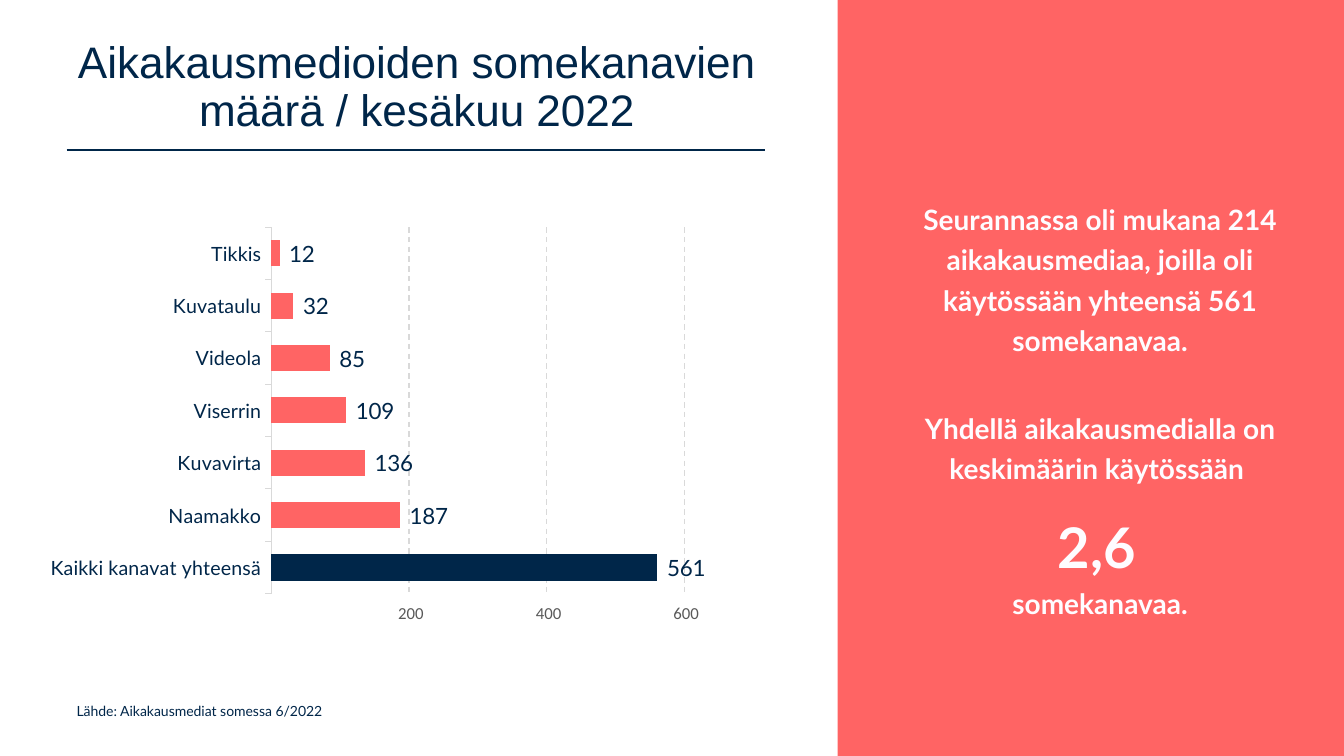
from lxml import etree
from pptx import Presentation
from pptx.chart.data import CategoryChartData
from pptx.dml.color import RGBColor
from pptx.enum.chart import XL_CHART_TYPE, XL_LABEL_POSITION, XL_TICK_MARK
from pptx.enum.dml import MSO_LINE
from pptx.enum.shapes import MSO_CONNECTOR, MSO_SHAPE
from pptx.enum.text import MSO_ANCHOR, PP_ALIGN
from pptx.oxml import parse_xml
from pptx.oxml.ns import nsdecls, qn
from pptx.util import Cm, Pt

BAR = XL_CHART_TYPE.BAR_CLUSTERED
OUTSIDE_END = XL_LABEL_POSITION.OUTSIDE_END
TICK_OUTSIDE = XL_TICK_MARK.OUTSIDE
DASH = MSO_LINE.DASH
STRAIGHT = MSO_CONNECTOR.STRAIGHT
RECTANGLE = MSO_SHAPE.RECTANGLE
MIDDLE = MSO_ANCHOR.MIDDLE
CENTER = PP_ALIGN.CENTER

NAVY, CORAL, GRID, GREY, PALE = "002649", "FF6464", "D9D9D9", "595959", "FEFCFF"
NUMBER_FORMAT = r"#\ ##0;\-#\ ##0;;@"  # hides zero


def rgb(value):
    return RGBColor.from_string(value)


def style(font, size, color, name="Lato", bold=False):
    font.size = Pt(size)
    font.color.rgb = rgb(color)
    font.name = name
    font.bold = bold


prs = Presentation()
prs.slide_width, prs.slide_height = Cm(33.87), Cm(19.05)
slide = prs.slides.add_slide(prs.slide_layouts[6])
shapes = slide.shapes

# Coral side panel
panel = shapes.add_shape(RECTANGLE, Cm(21.11), 0, Cm(12.76), Cm(19.05))
panel.shadow.inherit = False
panel.fill.solid()
panel.fill.fore_color.rgb = rgb(CORAL)
panel.line.fill.background()

# Rule below the title
rule = shapes.add_connector(STRAIGHT, Cm(1.68), Cm(3.78), Cm(19.28), Cm(3.78))
rule.line.color.rgb = rgb(NAVY)
rule.line.width = Pt(1)
etree.SubElement(rule._element.spPr, qn("a:effectLst"))

# Text: box, anchor, alignment, line spacing, then paragraphs of
# (space before, [(text, size), ...]) where a newline is a line break
texts = [
    ((1.68, 17.58, 16.71, 1.12), None, None, 1, "Lato", NAVY, False,
     [(0, [("Lähde: Aikakausmediat somessa 6/2022", 10)])]),
    ((1.68, 0.64, 17.65, 3.18), MIDDLE, CENTER, 0.9, "Arial", NAVY, False,
     [(0, [("Aikakausmedioiden somekanavien määrä / kesäkuu 2022", 31.5)])]),
    ((22.96, 3.81, 9.53, 12.95), MIDDLE, CENTER, 1.2, "Lato", PALE, True,
     [(0, [("Seurannassa oli mukana 214 aikakausmediaa, joilla oli "
            "käytössään yhteensä 561 somekanavaa.", 20)]),
      (34, [("Yhdellä aikakausmedialla on keskimäärin käytössään ", 20)]),
      (10, [("2,6", 40), (" \nsomekanavaa.", 20)])]),
]
for box, anchor, align, spacing, face, color, bold, paragraphs in texts:
    frame = shapes.add_textbox(*map(Cm, box)).text_frame
    frame.word_wrap = True
    frame.vertical_anchor = anchor
    for index, (before, runs) in enumerate(paragraphs):
        paragraph = frame.add_paragraph() if index else frame.paragraphs[0]
        paragraph.alignment = align
        paragraph.line_spacing = spacing
        paragraph.space_before = Pt(before)
        for text, size in runs:
            for part, piece in enumerate(text.split("\n")):
                if part:
                    paragraph.add_line_break()
                run = paragraph.add_run()
                run.text = piece
                style(run.font, size, color, face, bold)

# Channel counts, bottom bar first
channels = {
    "Kaikki kanavat yhteensä": 561,
    "Naamakko": 187,
    "Kuvavirta": 136,
    "Viserrin": 109,
    "Videola": 85,
    "Kuvataulu": 32,
    "Tikkis": 12,
}
data = CategoryChartData()
data.categories = list(channels)
data.add_series("Somekanavat", list(channels.values()))
chart = shapes.add_chart(BAR, 0, Cm(4.78), Cm(21.11), Cm(11.02), data).chart
chart.has_legend = False
chart.has_title = False
style(chart.font, 10, "000000", "Calibri")

# Bars and value labels
plot = chart.plots[0]
plot.gap_width = 100
plot.vary_by_categories = False
counts = plot.series[0]
counts.invert_if_negative = False
total = counts.points[0]
for bar, color in ((counts, CORAL), (total, NAVY)):
    bar.format.fill.solid()
    bar.format.fill.fore_color.rgb = rgb(color)
labels = counts.data_labels
labels.show_value = True
labels.position = OUTSIDE_END
labels.number_format = NUMBER_FORMAT
labels.number_format_is_linked = False
style(labels.font, 16, NAVY)

# Axes
channel_axis = chart.category_axis
channel_axis.major_tick_mark = TICK_OUTSIDE
channel_axis.format.line.color.rgb = rgb(GRID)
channel_axis.format.line.width = Pt(0.75)
style(channel_axis.tick_labels.font, 14, NAVY)

count_axis = chart.value_axis
count_axis.minimum_scale, count_axis.maximum_scale = 0, 600
count_axis.major_unit = 200
count_axis.major_tick_mark = TICK_OUTSIDE
count_axis.format.line.fill.background()
count_axis.tick_labels.number_format = NUMBER_FORMAT
count_axis.tick_labels.number_format_is_linked = False
style(count_axis.tick_labels.font, 12, GREY, "Calibri")
gridline = count_axis.major_gridlines.format.line
gridline.color.rgb = rgb(GRID)
gridline.width = Pt(1)
gridline.dash_style = DASH

# Inner plot area, as shares of the chart
layout = {"x": 0.324, "y": 0.086, "w": 0.493, "h": 0.838}
modes = '<c:xMode val="edge"/><c:yMode val="edge"/>'
sizes = "".join(f'<c:{key} val="{share}"/>' for key, share in layout.items())
plot_area = chart._chartSpace.chart.plotArea
for old_layout in plot_area.findall(qn("c:layout")):
    plot_area.remove(old_layout)
plot_area.insert(0, parse_xml(
    f'<c:layout {nsdecls("c")}><c:manualLayout><c:layoutTarget val="inner"/>'
    f"{modes}{sizes}</c:manualLayout></c:layout>"))

prs.save("out.pptx")
